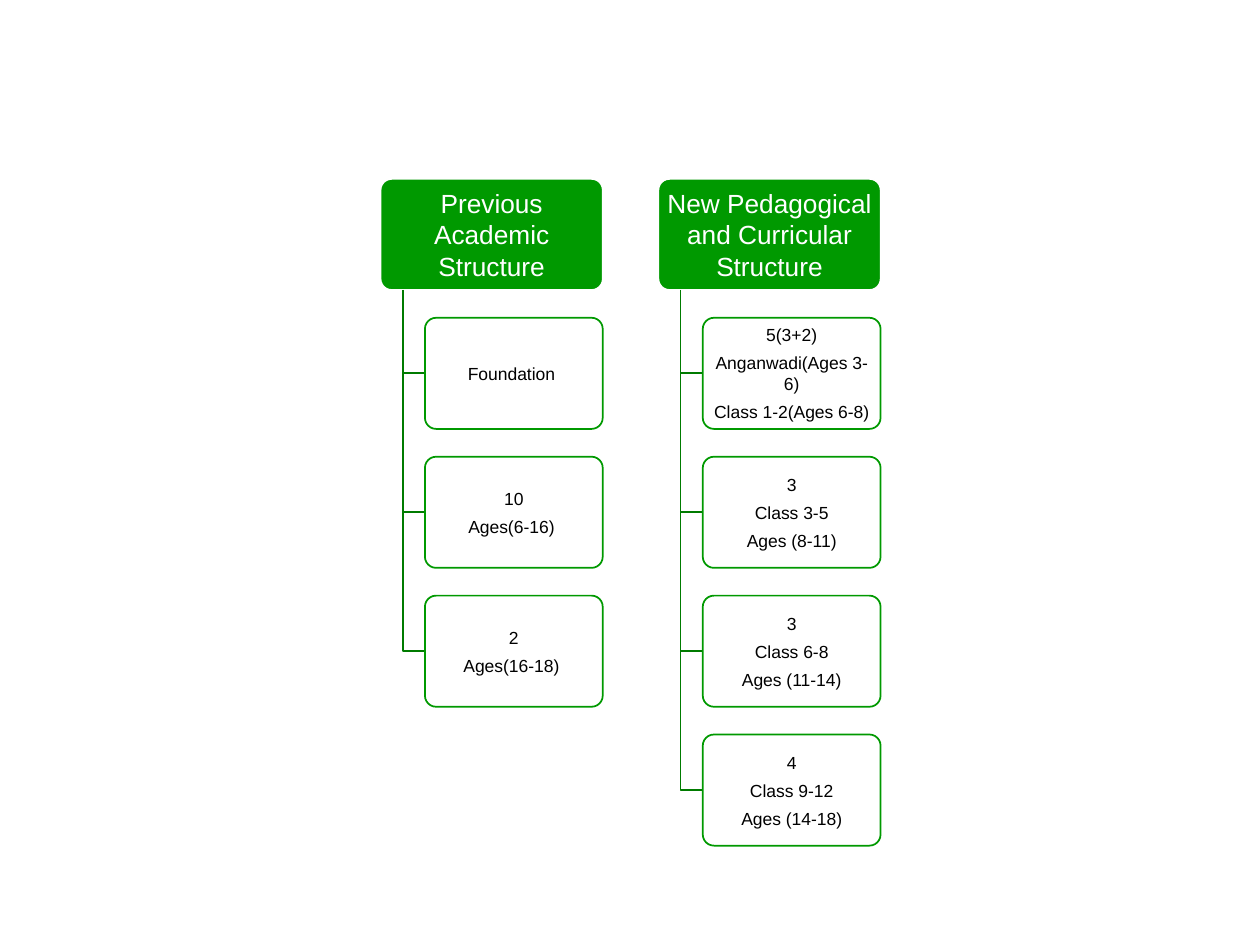
import pptx
import pptx.util
import pptx.dml.color
import pptx.enum.shapes
import pptx.enum.text
import pptx.oxml
import pptx.oxml.ns

Inches = pptx.util.Inches
Pt = pptx.util.Pt

# Content: each column has a heading and its stages, one list of lines per stage
COLUMNS = [
    ("Previous Academic Structure", [
        ["Foundation "],
        ["10", "Ages(6-16) "],
        ["2", "Ages(16-18) "],
    ]),
    ("New Pedagogical and Curricular Structure", [
        ["5(3+2)", "Anganwadi(Ages 3-6)", "Class 1-2(Ages 6-8)"],
        ["3", "Class 3-5", "Ages (8-11)"],
        ["3", "Class 6-8", "Ages (11-14)"],
        ["4", "Class 9-12", "Ages (14-18)"],
    ]),
]
GREEN, RAIL_GREEN, WHITE, BLACK = "009900", "007B00", "FFFFFF", "000000"

# Layout: every measure follows from the distance between rows
LEFT, TOP, BOTTOM_ROW = 3.02, 1.42, 5.83
ROW_STEP = (BOTTOM_ROW - TOP) / 4
HEIGHT = 0.8 * ROW_STEP
HEADING_WIDTH = 2 * HEIGHT
COLUMN_STEP = 2 * ROW_STEP
RAIL_INDENT = 0.1 * HEADING_WIDTH
STAGE_INDENT = 0.2 * HEADING_WIDTH


def color(hex_text):
    return pptx.dml.color.RGBColor.from_string(hex_text)


def add_box(page, lines, left, top, width, *, fill, line, text_color, size,
            margins, opacity=100):
    box = page.shapes.add_shape(
        pptx.enum.shapes.MSO_SHAPE.ROUNDED_RECTANGLE,
        Inches(left), Inches(top), Inches(width), Inches(HEIGHT))
    box.shadow.inherit = False
    box.adjustments[0] = 0.1
    box.fill.solid()
    box.fill.fore_color.rgb = color(fill)
    if opacity < 100:
        fill_color = box.fill._xPr.find(".//" + pptx.oxml.ns.qn("a:srgbClr"))
        alpha = pptx.oxml.parse_xml(
            f'<a:alpha {pptx.oxml.ns.nsdecls("a")} val="{opacity * 1000}"/>')
        fill_color.append(alpha)
    box.line.color.rgb = color(line)
    box.line.width = Pt(1)

    frame = box.text_frame
    frame.word_wrap = True
    frame.vertical_anchor = pptx.enum.text.MSO_ANCHOR.MIDDLE
    frame.margin_left = frame.margin_right = Inches(margins[0])
    frame.margin_top = frame.margin_bottom = Inches(margins[1])
    for index, text in enumerate(lines):
        para = frame.add_paragraph() if index else frame.paragraphs[0]
        para.alignment = pptx.enum.text.PP_ALIGN.CENTER
        para.space_after = Pt(4)
        span = para.add_run()
        span.text = text
        span.font.name = "Arial"
        span.font.size = Pt(size)
        span.font.color.rgb = color(text_color)


def add_branch(page, left, top, right, bottom):
    builder = page.shapes.build_freeform(Inches(left), Inches(top))
    builder.add_line_segments(
        [(Inches(left), Inches(bottom)), (Inches(right), Inches(bottom))],
        close=False)
    branch = builder.convert_to_shape()
    branch.shadow.inherit = False
    branch.fill.background()
    branch.line.color.rgb = color(RAIL_GREEN)
    branch.line.width = Pt(1)


def main():
    deck = pptx.Presentation()
    deck.slide_width, deck.slide_height = Inches(10), Inches(7.5)
    page = deck.slides.add_slide(deck.slide_layouts[6])

    for column, (heading, stages) in enumerate(COLUMNS):
        left = LEFT + column * COLUMN_STEP
        add_box(page, [heading], left, TOP, HEADING_WIDTH, fill=GREEN,
                line=WHITE, text_color=WHITE, size=15, margins=(0.03, 0.02))
        # Stages hang below the heading, each on its own branch
        stage_left = left + STAGE_INDENT
        for row, lines in enumerate(stages, start=1):
            top = TOP + row * ROW_STEP
            add_branch(page, left + RAIL_INDENT, TOP + HEIGHT,
                       stage_left, top + HEIGHT / 2)
            add_box(page, lines, stage_left, top, HEADING_WIDTH - STAGE_INDENT,
                    fill=WHITE, line=GREEN, text_color=BLACK, size=10,
                    margins=(0.02, 0.01), opacity=90)

    deck.save("out.pptx")


if __name__ == "__main__":
    main()
